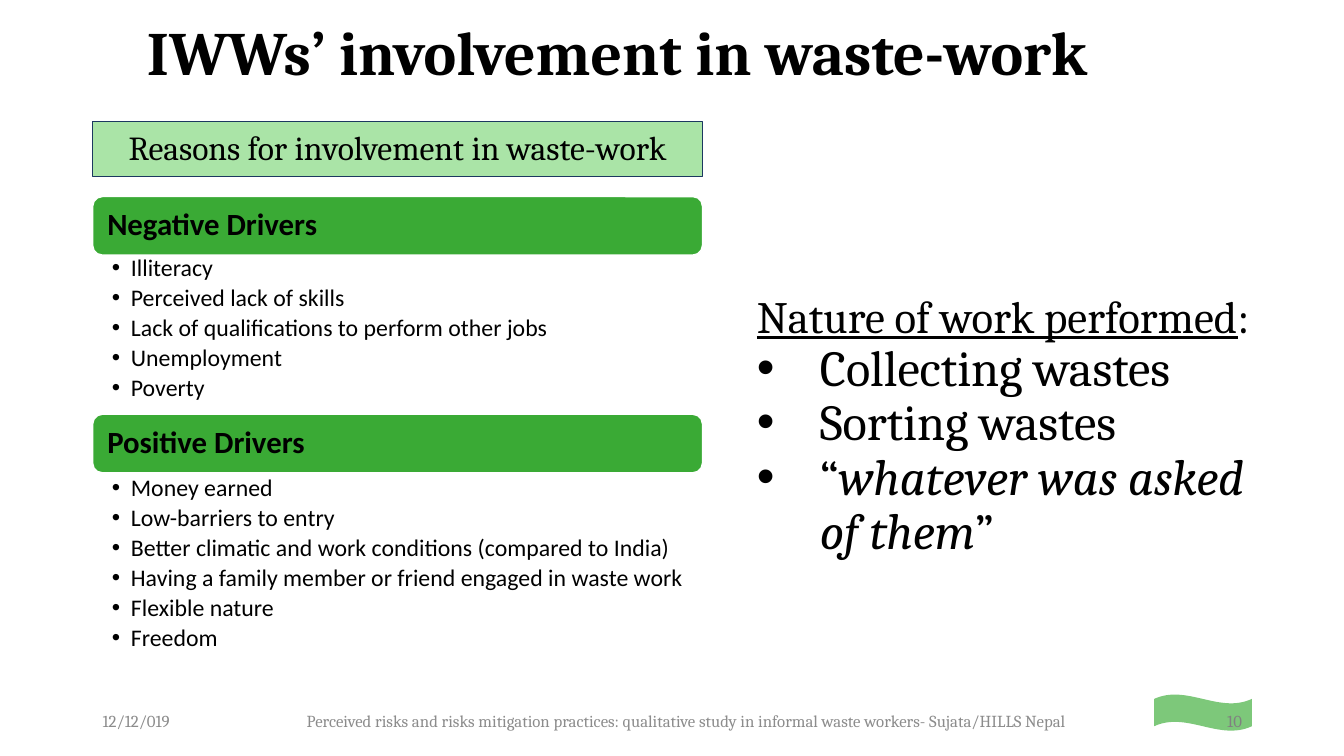
from lxml.etree import SubElement
from pptx import Presentation
from pptx.dml.color import RGBColor
from pptx.enum.shapes import MSO_SHAPE
from pptx.enum.text import MSO_ANCHOR, PP_ALIGN
from pptx.oxml.ns import qn
from pptx.util import Pt

# Content
TITLE = "IWWs’ involvement in waste-work"
REASONS_HEADING = "Reasons for involvement in waste-work"
# Heading, top of its bar, top of its list, height of its list, reasons
DRIVERS = [
    ("Negative Drivers", 140.4, 180.7, 114.5, [
        "Illiteracy",
        "Perceived lack of skills",
        "Lack of qualifications to perform other jobs",
        "Unemployment",
        "Poverty",
    ]),
    ("Positive Drivers", 295.9, 337.7, 139.7, [
        "Money earned",
        "Low-barriers to entry",
        "Better climatic and work conditions (compared to India)",
        "Having a family member or friend engaged in waste work",
        "Flexible nature",
        "Freedom",
    ]),
]
# Each paragraph is a list of runs: text, style
WORK = [
    [("Nature of work performed", "underline"), (":", None)],
    [("Collecting wastes", None)],
    [("Sorting wastes", None)],
    [("“", None), ("whatever was asked of them", "italic"), ("”", None)],
]
# Text, left, width, alignment, colour
FOOTERS = [
    ("12/12/019", 66.2, 94.3, PP_ALIGN.LEFT, "8C8C8C"),
    ("10", 813.6, 80.6, PP_ALIGN.RIGHT, "808080"),
    ("Perceived risks and risks mitigation practices: qualitative study in "
     "informal waste workers- Sujata/HILLS Nepal",
     180.7, 619.2, PP_ALIGN.CENTER, "8C8C8C"),
]

# Layout and style
COLUMN_LEFT, COLUMN_WIDTH = 66.2, 435.6
BAR_HEIGHT = 41.8
DEFAULT_INSETS = (7.2, 3.6, 7.2, 3.6)
BLACK, WHITE, GREEN = "000000", "FFFFFF", "3AAA35"
PALE_GREEN, NAVY, SWOOSH_GREEN = "AAE4A7", "1C3860", "7DC87A"


def color(hex_code):
    return RGBColor.from_string(hex_code)


def add_box(slide, preset, left, top, width, height, fill, line=None, line_width=1):
    shape = slide.shapes.add_shape(preset, Pt(left), Pt(top), Pt(width), Pt(height))
    shape.shadow.inherit = False
    shape.fill.solid()
    shape.fill.fore_color.rgb = color(fill)
    if line:
        shape.line.color.rgb = color(line)
        shape.line.width = Pt(line_width)
    else:
        shape.line.fill.background()
    return shape


def prepare_frame(shape, anchor=MSO_ANCHOR.MIDDLE, insets=DEFAULT_INSETS):
    frame = shape.text_frame
    frame.word_wrap = True
    frame.vertical_anchor = anchor
    frame.margin_left, frame.margin_top, frame.margin_right, frame.margin_bottom = map(Pt, insets)
    return frame


def add_text_frame(slide, left, top, width, height, **options):
    box = slide.shapes.add_textbox(Pt(left), Pt(top), Pt(width), Pt(height))
    return prepare_frame(box, **options)


def next_paragraph(frame, index):
    return frame.paragraphs[0] if index == 0 else frame.add_paragraph()


def set_bullet(paragraph, indent):
    properties = paragraph._p.get_or_add_pPr()
    properties.set("marL", str(Pt(indent)))
    properties.set("indent", str(-Pt(indent)))
    SubElement(properties, qn("a:buFont")).set("typeface", "Arial")
    SubElement(properties, qn("a:buChar")).set("char", "•")


def style_paragraph(paragraph, size, name="Cambria", hex_code=BLACK, bold=False,
                    alignment=PP_ALIGN.LEFT, line_spacing=0.9):
    paragraph.alignment = alignment
    paragraph.line_spacing = line_spacing
    for run in paragraph.runs:
        run.font.size = Pt(size)
        run.font.name = name
        run.font.bold = bold
        run.font.color.rgb = color(hex_code)


def build_slide(slide):
    # Plain swoosh in the corner
    add_box(slide, MSO_SHAPE.WAVE, 824.4, 496, 69.8, 26, SWOOSH_GREEN)

    # Title
    frame = add_text_frame(slide, 97.9, 10.1, 796.3, 59)
    frame.text = TITLE
    style_paragraph(frame.paragraphs[0], 44, bold=True)

    # Heading of the reasons
    banner = add_box(slide, MSO_SHAPE.RECTANGLE, COLUMN_LEFT, 87.1, COLUMN_WIDTH, 38.9,
                     PALE_GREEN, NAVY, 0.75)
    frame = prepare_frame(banner)
    frame.text = REASONS_HEADING
    style_paragraph(frame.paragraphs[0], 24, alignment=PP_ALIGN.CENTER)

    # Drivers: a bar and a bulleted list each
    for heading, bar_top, list_top, list_height, reasons in DRIVERS:
        bar = add_box(slide, MSO_SHAPE.ROUNDED_RECTANGLE, COLUMN_LEFT, bar_top,
                      COLUMN_WIDTH, BAR_HEIGHT, GREEN, WHITE)
        frame = prepare_frame(bar, insets=(8.4, 6.5, 8.4, 6.5))
        frame.text = heading
        style_paragraph(frame.paragraphs[0], 22, "Calibri", bold=True)

        frame = add_text_frame(slide, COLUMN_LEFT, list_top, COLUMN_WIDTH, list_height,
                               anchor=MSO_ANCHOR.TOP, insets=(13.8, 2.2, 12.2, 2.2))
        for index, reason in enumerate(reasons):
            paragraph = next_paragraph(frame, index)
            paragraph.text = reason
            set_bullet(paragraph, 13.5)
            style_paragraph(paragraph, 17, "Calibri")
            paragraph.space_after = Pt(3.1)

    # Nature of work
    frame = add_text_frame(slide, 533.5, 128.2, 397.4, 354.2)
    for index, runs in enumerate(WORK):
        paragraph = next_paragraph(frame, index)
        for text, style in runs:
            run = paragraph.add_run()
            run.text = text
            run.font.underline = style == "underline"
            run.font.italic = style == "italic"
        if index > 0:
            set_bullet(paragraph, 45)
        style_paragraph(paragraph, 36 if index > 0 else 32)

    # Footer
    for text, left, width, alignment, hex_code in FOOTERS:
        frame = add_text_frame(slide, left, 500.4, width, 28.8)
        frame.text = text
        style_paragraph(frame.paragraphs[0], 12, hex_code=hex_code, alignment=alignment,
                        line_spacing=1.0)


def main():
    presentation = Presentation()
    presentation.slide_width, presentation.slide_height = Pt(960), Pt(540)
    build_slide(presentation.slides.add_slide(presentation.slide_layouts[6]))
    presentation.save("out.pptx")


if __name__ == "__main__":
    main()
